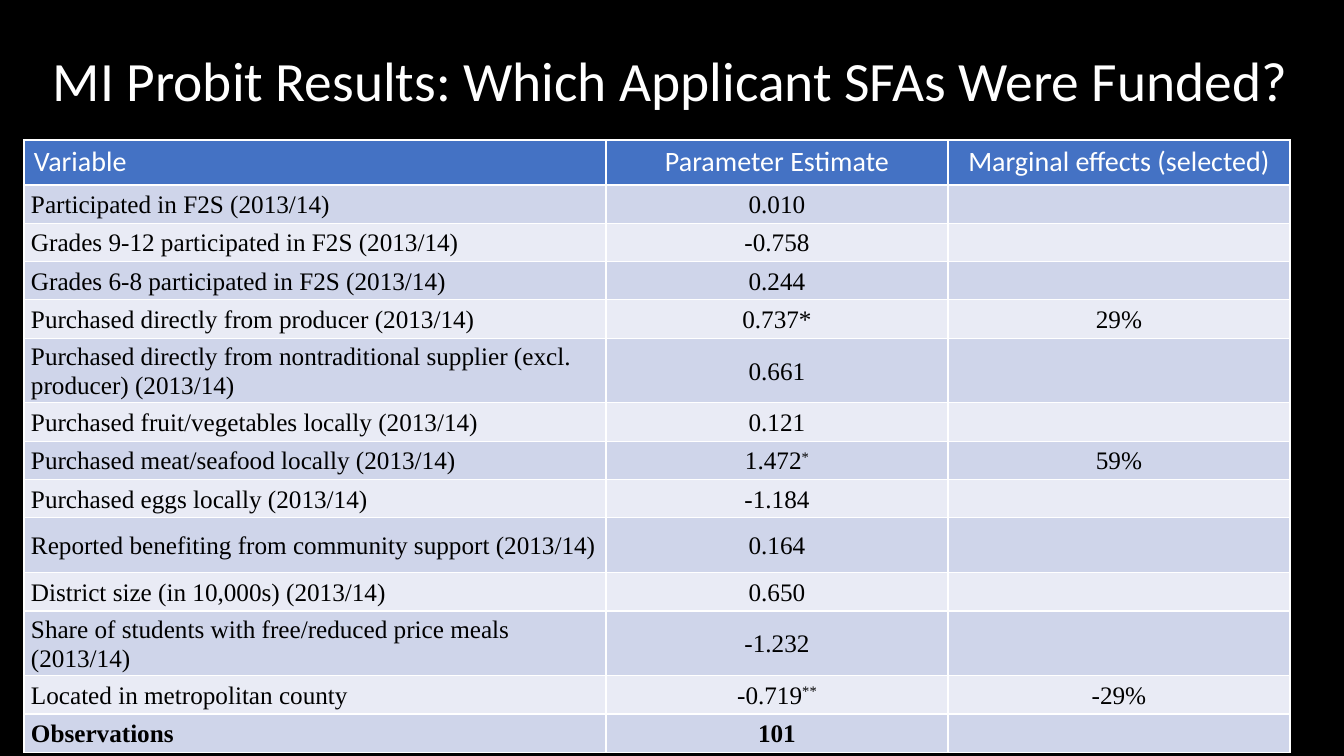
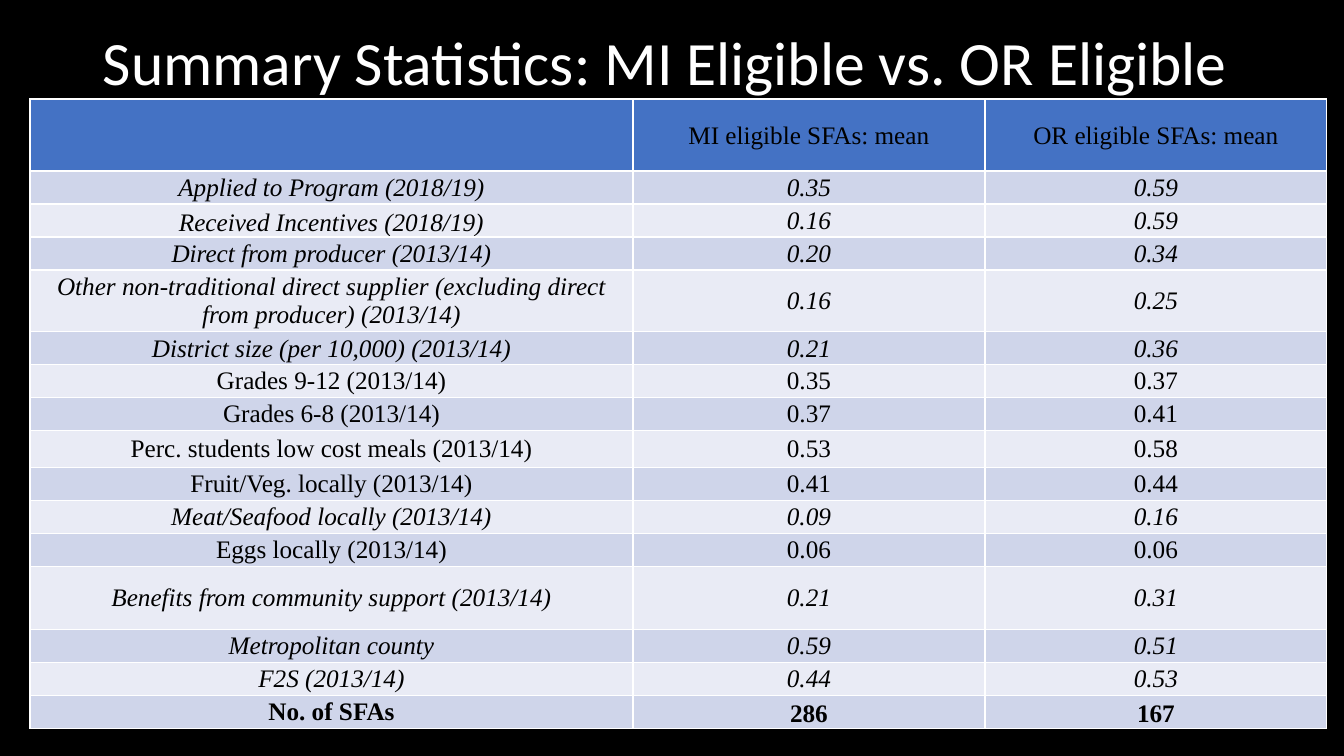
from dataclasses import dataclass

from pptx import Presentation
from pptx.dml.color import RGBColor
from pptx.enum.text import MSO_ANCHOR, PP_ALIGN
from pptx.util import Emu, Pt

BLACK, WHITE, HEADER_BLUE = "000000", "FFFFFF", "4472C4"
BANDS = ("E9EBF5", "CFD5EA")
WIDTH, HEIGHT = 1344, 756


def px(length):
    """Turn pixels into EMU."""
    return Emu(round(length * 12192000 / WIDTH))


def color(hex_code):
    """Turn a hex string into a colour."""
    return RGBColor.from_string(hex_code)


@dataclass(frozen=True)
class CellLook:
    """Text style and insets of a table cell."""
    font: str = "Times New Roman"
    size: int = 18
    ink: str = BLACK
    side: int = 1
    top: int = 1
    bottom: int = 0
    spacing: float = 1.0
    anchor: MSO_ANCHOR = MSO_ANCHOR.MIDDLE


class Deck:
    """Black slides with a light title and a banded table."""

    def __init__(self):
        """Start an empty presentation."""
        self.show = Presentation()
        self.show.slide_width, self.show.slide_height = px(WIDTH), px(HEIGHT)
        self.slide = None

    def new_slide(self):
        """Add a blank slide with the shared background."""
        self.slide = self.show.slides.add_slide(self.show.slide_layouts[6])
        backdrop = self.slide.background.fill
        backdrop.solid()
        backdrop.fore_color.rgb = color(BLACK)

    def style(self, paragraph, font, size, ink, align, spacing):
        """Set the font and the layout of a paragraph."""
        paragraph.alignment = align
        paragraph.line_spacing = spacing
        paragraph.font.name = font
        paragraph.font.size = Pt(size)
        paragraph.font.color.rgb = color(ink)

    def title(self, text, left, top, width, height, size, align):
        """Add the slide title."""
        frame = self.slide.shapes.add_textbox(*map(px, (left, top, width, height))).text_frame
        frame.word_wrap = True
        frame.vertical_anchor = MSO_ANCHOR.MIDDLE
        heading = frame.paragraphs[0]
        heading.text = text
        self.style(heading, "Calibri", size, WHITE, align, 0.9)

    def cell(self, cell, text, look, fill, align, bold=False, italic=False):
        """Fill one table cell; text after ^ is raised."""
        cell.fill.solid()
        cell.fill.fore_color.rgb = color(fill)
        cell.margin_left = cell.margin_right = px(look.side)
        cell.margin_top, cell.margin_bottom = px(look.top), px(look.bottom)
        cell.vertical_anchor = look.anchor
        paragraph = cell.text_frame.paragraphs[0]
        self.style(paragraph, look.font, look.size, look.ink, align, look.spacing)
        paragraph.font.bold, paragraph.font.italic = bold, italic
        value, _, mark = text.partition("^")
        if value:
            paragraph.add_run().text = value
        if mark:
            raised = paragraph.add_run()
            raised.text = mark
            raised._r.get_or_add_rPr().set("baseline", "30000")

    def table(self, rows, left, top, height, widths, tall_rows, header, body,
              label_align, italic_rows=()):
        """Add a table whose rows share the height the tall ones leave."""
        table = self.slide.shapes.add_table(
            len(rows), len(widths), px(left), px(top), px(sum(widths)), px(height)).table
        for column, width in zip(table.columns, widths):
            column.width = px(width)
        shared = (height - sum(tall_rows.values())) / (len(rows) - len(tall_rows))
        for r, row in enumerate(rows):
            table.rows[r].height = px(tall_rows.get(r, shared))
            for c, text in enumerate(row):
                self.cell(table.cell(r, c), text,
                          body if r else header,
                          BANDS[r % 2] if r else HEADER_BLUE,
                          PP_ALIGN.CENTER if c else label_align,
                          bold=r == len(rows) - 1, italic=r in italic_rows)
        return table


PROBIT_ROWS = [
    ("Variable", "Parameter Estimate", "Marginal effects (selected)"),
    ("Participated in F2S (2013/14)", "0.010", ""),
    ("Grades 9-12 participated in F2S (2013/14)", "-0.758", ""),
    ("Grades 6-8 participated in F2S (2013/14)", "0.244", ""),
    ("Purchased directly from producer (2013/14)", "0.737*", "29%"),
    ("Purchased directly from nontraditional supplier (excl. producer) (2013/14)", "0.661", ""),
    ("Purchased fruit/vegetables locally (2013/14)", "0.121", ""),
    ("Purchased meat/seafood locally (2013/14)", "1.472^*", "59%"),
    ("Purchased eggs locally (2013/14)", "-1.184", ""),
    ("Reported benefiting from community support (2013/14)", "0.164", ""),
    ("District size (in 10,000s) (2013/14)", "0.650", ""),
    ("Share of students with free/reduced price meals (2013/14)", "-1.232", ""),
    ("Located in metropolitan county", "-0.719^**", "-29%"),
    ("Observations", "101", ""),
]

SUMMARY_ROWS = [
    ("", "MI eligible SFAs: mean", "OR eligible SFAs: mean"),
    ("Applied to Program (2018/19)", "0.35", "0.59"),
    ("Received Incentives (2018/19)", "0.16", "0.59"),
    ("Direct from producer (2013/14)", "0.20", "0.34"),
    ("Other non-traditional direct supplier (excluding direct from producer) (2013/14)",
     "0.16", "0.25"),
    ("District size (per 10,000) (2013/14)", "0.21", "0.36"),
    ("Grades 9-12 (2013/14)", "0.35", "0.37"),
    ("Grades 6-8 (2013/14)", "0.37", "0.41"),
    ("Perc. students low cost meals (2013/14)", "0.53", "0.58"),
    ("Fruit/Veg. locally (2013/14)", "0.41", "0.44"),
    ("Meat/Seafood locally (2013/14)", "0.09", "0.16"),
    ("Eggs locally (2013/14)", "0.06", "0.06"),
    ("Benefits from community support (2013/14)", "0.21", "0.31"),
    ("Metropolitan county", "0.59", "0.51"),
    ("F2S (2013/14)", "0.44", "0.53"),
    ("No. of SFAs", "286", "167"),
]


def main():
    """Build both slides and save them."""
    deck = Deck()

    deck.new_slide()
    deck.title("MI Probit Results: Which Applicant SFAs Were Funded?",
               18, 40, 1305, 87, 39.6, PP_ALIGN.CENTER)
    deck.table(PROBIT_ROWS, 24, 140, 603, (582, 342, 342),
               {0: 45, 5: 60, 9: 55, 11: 60},
               CellLook("Calibri", 20, WHITE, 10, 5, 5, anchor=MSO_ANCHOR.TOP),
               CellLook(side=7, top=0, spacing=1.07), PP_ALIGN.LEFT)

    deck.new_slide()
    deck.title("Summary Statistics: MI Eligible vs. OR Eligible",
               93, 0, 1159, 131, 44, PP_ALIGN.LEFT)
    summary = deck.table(SUMMARY_ROWS, 30, 99, 626, (603, 352, 342),
                         {0: 72, 4: 58, 8: 37, 12: 63},
                         CellLook(), CellLook(), PP_ALIGN.CENTER,
                         italic_rows=(1, 2, 3, 4, 5, 10, 12, 13, 14))
    for r, c in ((2, 0), (15, 1), (15, 2)):
        summary.cell(r, c).vertical_anchor = MSO_ANCHOR.BOTTOM

    deck.show.save("out.pptx")


if __name__ == "__main__":
    main()
